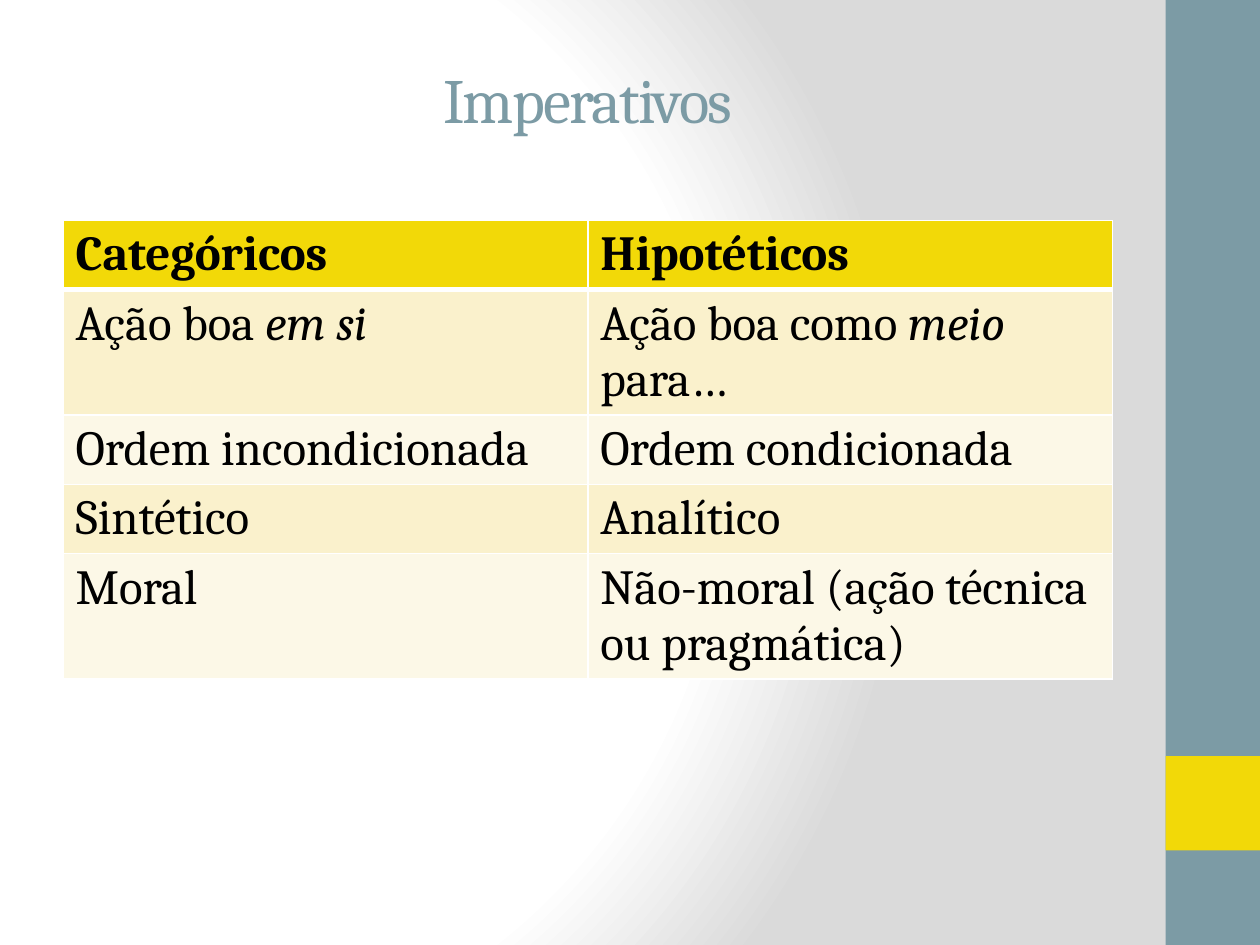
from lxml.etree import SubElement
from pptx import Presentation
from pptx.dml.color import RGBColor
from pptx.enum.shapes import MSO_SHAPE
from pptx.enum.text import MSO_ANCHOR, MSO_AUTO_SIZE, PP_ALIGN
from pptx.oxml import parse_xml
from pptx.oxml.ns import nsdecls, qn
from pptx.util import Inches, Pt

COLORS = {
    "slate": "7C9BA5",
    "yellow": "F2D908",
    "band_dark": "FAF1CC",
    "band_light": "FCF8E7",
    "white": "FFFFFF",
    "gray": "DADADA",
    "black": "000000",
}
FONT = "Cambria"

# Each cell is a list of (text, italic) runs.
ROWS = [
    [[("Categóricos", False)], [("Hipotéticos", False)]],
    [[("Ação boa ", False), ("em si", True)],
     [("Ação boa como ", False), ("meio ", True), ("para…", False)]],
    [[("Ordem incondicionada", False)], [("Ordem condicionada", False)]],
    [[("Sintético", False)], [("Analítico", False)]],
    [[("Moral", False)], [("Não-moral (ação técnica ou pragmática)", False)]],
]
ROW_HEIGHTS = [0.55, 0.99, 0.55, 0.55, 0.99]


def add_text(paragraph, text, size=28, color="black", bold=False, italic=False, spacing=None):
    run = paragraph.add_run()
    run.text = text
    font = run.font
    font.name, font.size, font.bold, font.italic = FONT, Pt(size), bold, italic
    font.color.rgb = RGBColor.from_string(COLORS[color])
    if spacing is not None:
        run._r.get_or_add_rPr().set("spc", str(int(spacing * 100)))


def set_borders(cell, widths):
    """Draw white cell borders; widths maps L, R, T, B to points."""
    properties = cell._tc.get_or_add_tcPr()
    for index, side in enumerate("LRTB"):
        line = parse_xml(
            f'<a:ln{side} {nsdecls("a")} w="{Pt(widths[side])}"><a:solidFill>'
            f'<a:srgbClr val="{COLORS["white"]}"/></a:solidFill></a:ln{side}>')
        properties.insert(index, line)


class SlideBuilder:
    def __init__(self, presentation):
        self.slide = presentation.slides.add_slide(presentation.slide_layouts[5])

    def radial_background(self):
        fill = self.slide.background.fill
        fill.solid()
        background = self.slide._element.cSld.find(qn("p:bg")).find(qn("p:bgPr"))
        gradient = parse_xml(f'<a:gradFill {nsdecls("a")} rotWithShape="1"/>')
        stops = SubElement(gradient, qn("a:gsLst"))
        for position, color in [(0, "white"), (75, "white"), (100, "gray")]:
            stop = SubElement(stops, qn("a:gs"), pos=str(position * 1000))
            SubElement(stop, qn("a:srgbClr"), val=COLORS[color])
        circle = SubElement(gradient, qn("a:path"), path="circle")
        SubElement(circle, qn("a:fillToRect"), l="20000", t="50000", r="100000", b="50000")
        background.replace(background.find(qn("a:solidFill")), gradient)

    def rectangle(self, left, top, width, height, color):
        shape = self.slide.shapes.add_shape(
            MSO_SHAPE.RECTANGLE, Inches(left), Inches(top), Inches(width), Inches(height))
        shape.shadow.inherit = False
        shape.fill.solid()
        shape.fill.fore_color.rgb = RGBColor.from_string(COLORS[color])
        shape.line.fill.background()

    def title(self, text, left, top, width, height):
        shape = self.slide.shapes.title
        shape.left, shape.top = Inches(left), Inches(top)
        shape.width, shape.height = Inches(width), Inches(height)
        frame = shape.text_frame
        frame.auto_size = MSO_AUTO_SIZE.NONE
        frame.vertical_anchor = MSO_ANCHOR.MIDDLE
        paragraph = frame.paragraphs[0]
        paragraph.alignment = PP_ALIGN.CENTER
        add_text(paragraph, text, size=36, color="slate", spacing=-1)

    def table(self, rows, row_heights, left, top, width):
        table = self.slide.shapes.add_table(
            len(rows), len(rows[0]), Inches(left), Inches(top),
            Inches(width), Inches(sum(row_heights))).table
        for row_index, (row, height) in enumerate(zip(rows, row_heights)):
            table.rows[row_index].height = Inches(height)
            header = row_index == 0
            band = "band_dark" if row_index % 2 else "band_light"
            for column_index, runs in enumerate(row):
                cell = table.cell(row_index, column_index)
                cell.fill.solid()
                cell.fill.fore_color.rgb = RGBColor.from_string(
                    COLORS["yellow" if header else band])
                set_borders(cell, {"L": 1, "R": 1, "T": 3 if row_index == 1 else 1,
                                   "B": 3 if header else 1})
                for text, italic in runs:
                    add_text(cell.text_frame.paragraphs[0], text, bold=header, italic=italic)


def main():
    presentation = Presentation()
    presentation.slide_width, presentation.slide_height = Inches(10), Inches(7.5)
    builder = SlideBuilder(presentation)
    builder.radial_background()
    builder.rectangle(9.25, 0, 0.75, 7.5, "slate")
    builder.rectangle(9.25, 6, 0.75, 0.75, "yellow")
    builder.title("Imperativos", 0.5, 0.3, 8.33, 0.96)
    builder.table(ROWS, ROW_HEIGHTS, 0.5, 1.75, 8.33)
    presentation.save("out.pptx")


if __name__ == "__main__":
    main()
